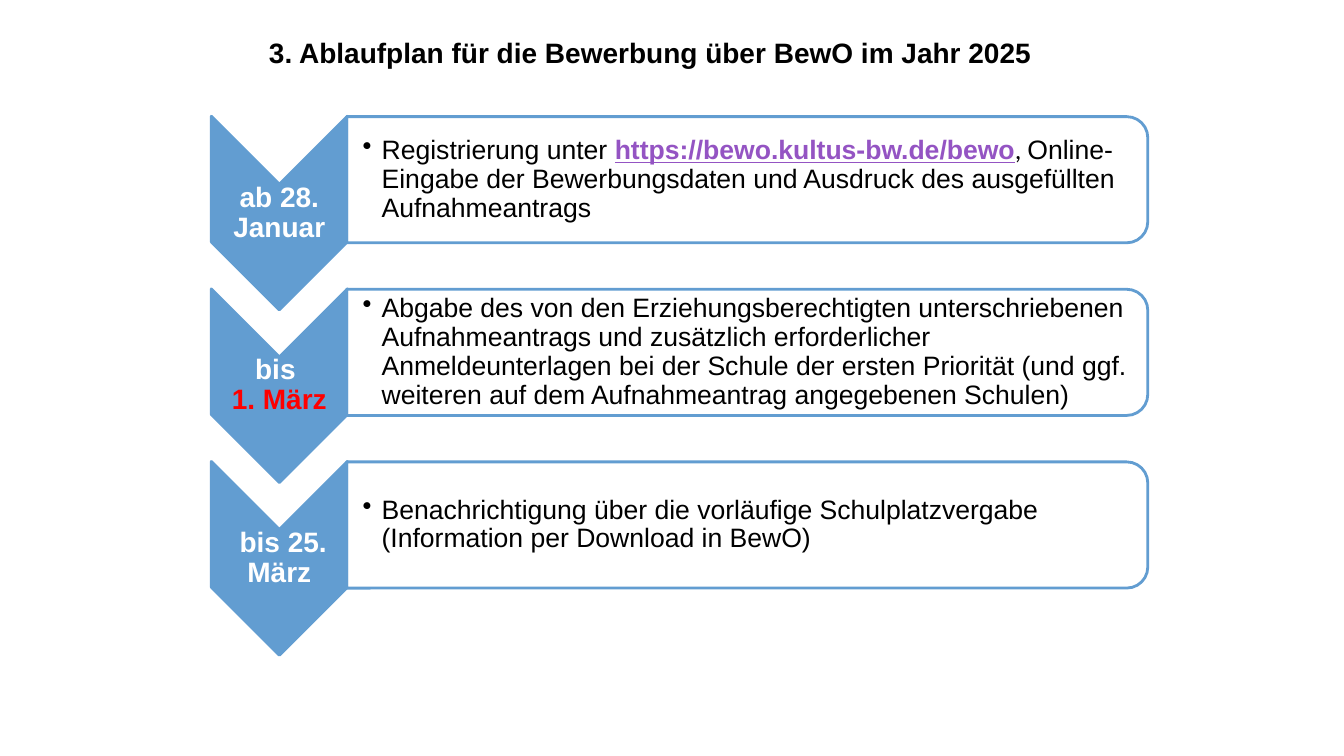
from dataclasses import dataclass

from lxml import etree
from pptx import Presentation
from pptx.dml.color import RGBColor
from pptx.enum.shapes import MSO_SHAPE
from pptx.enum.text import MSO_ANCHOR, PP_ALIGN
from pptx.oxml.ns import qn
from pptx.util import Cm, Pt

CHEVRON = MSO_SHAPE.CHEVRON
ROUNDED_TOP = MSO_SHAPE.ROUND_2_SAME_RECTANGLE
TOP, MIDDLE = MSO_ANCHOR.TOP, MSO_ANCHOR.MIDDLE
LEFT, CENTER = PP_ALIGN.LEFT, PP_ALIGN.CENTER


@dataclass(frozen=True)
class Theme:
    font: str = "Arial"
    alt_font: str = "Calibri"
    black: str = "000000"
    white: str = "FFFFFF"
    red: str = "FF0000"
    blue: str = "629DD1"
    purple: str = "9454C3"
    heading: int = 20
    body: int = 19
    line: int = 2


T = Theme()

# Content: each step has label runs and description runs (text, format)
TITLE = "3. Ablaufplan für die Bewerbung über BewO im Jahr 2025"
STEPS = [
    (
        [("ab 28.\nJanuar", {})],
        [
            ("Registrierung unter ", {}),
            ("https://bewo.kultus-bw.de/bewo",
             {"color": T.purple, "bold": True, "underline": True}),
            (", ", {"font": T.alt_font}),
            ("Online-Eingabe der Bewerbungsdaten und Ausdruck des "
             "ausgefüllten Aufnahmeantrags", {}),
        ],
    ),
    (
        [("bis \n", {}), ("1. März", {"color": T.red})],
        [("Abgabe des von den Erziehungsberechtigten unterschriebenen "
          "Aufnahmeantrags und zusätzlich erforderlicher Anmeldeunterlagen "
          "bei der Schule der ersten Priorität (und ggf. weiteren auf dem "
          "Aufnahmeantrag angegebenen Schulen)", {})],
    ),
    (
        [(" bis 25. März", {})],
        [("Benachrichtigung über die vorläufige Schulplatzvergabe "
          "(Information per Download in BewO)", {})],
    ),
]

# Layout in cm: centres of the first row, and the distance between rows
PITCH = 4.35
CHEVRON_X, CHEVRON_Y = 7.04, 5.37
BAR_X, BAR_Y = 18.83, 4.53
BULLET_INDENT = 0.48


def centred(x, y, w, h):
    return Cm(x - w / 2), Cm(y - h / 2), Cm(w), Cm(h)


def add_run(p, text, *, size, color=T.black, bold=False, underline=False,
            font=T.font):
    for i, part in enumerate(text.split("\n")):
        if i:
            p.add_line_break()
        if part:
            r = p.add_run()
            r.text = part
            r.font.name, r.font.size = font, Pt(size)
            r.font.bold, r.font.underline = bold, underline
            r.font.color.rgb = RGBColor.from_string(color)


def add_text(box, runs, *, align=LEFT, anchor=MIDDLE, spacing=0.9,
             insets=(0.03, 0.03, 0.03, 0.03), bullet=False, **style):
    tf = slide.shapes.add_textbox(*box).text_frame
    tf.word_wrap, tf.vertical_anchor = True, anchor
    (tf.margin_left, tf.margin_top,
     tf.margin_right, tf.margin_bottom) = map(Cm, insets)
    p = tf.paragraphs[0]
    p.alignment, p.line_spacing = align, spacing
    if bullet:
        pPr = p._p.get_or_add_pPr()
        pPr.set("marL", str(Cm(BULLET_INDENT)))
        pPr.set("indent", str(-Cm(BULLET_INDENT)))
        etree.SubElement(pPr, qn("a:buChar")).set("char", "•")
    for text, extra in runs:
        add_run(p, text, **{**style, **extra})


def add_turned_shape(kind, box, fill, opacity=100):
    sp = slide.shapes.add_shape(kind, *box)
    sp.rotation = 90
    sp.shadow.inherit = False
    sp.fill.solid()
    sp.fill.fore_color.rgb = RGBColor.from_string(fill)
    sp.line.color.rgb = RGBColor.from_string(T.blue)
    sp.line.width = Pt(T.line)
    if opacity < 100:
        clr = sp._element.spPr.find(qn("a:solidFill"))[0]
        etree.SubElement(clr, qn("a:alpha")).set("val", str(opacity * 1000))


prs = Presentation()
prs.slide_width, prs.slide_height = Cm(33.87), Cm(19.05)
slide = prs.slides.add_slide(prs.slide_layouts[6])

# Title
add_text((Cm(6.53), Cm(0.33), Cm(24.61), Cm(1.55)), [(TITLE, {})],
         anchor=TOP, spacing=1.5, insets=(0.25, 0.13, 0.25, 0.13),
         size=T.heading, bold=True)

# Steps: chevron with date, bar with description
for i, (label, description) in enumerate(STEPS):
    chevron_y, bar_y = CHEVRON_Y + i * PITCH, BAR_Y + i * PITCH
    add_turned_shape(CHEVRON, centred(CHEVRON_X, chevron_y, 4.88, 3.43), T.blue)
    add_text(centred(CHEVRON_X, chevron_y, 3.43, 1.47), label, align=CENTER,
             size=T.heading, color=T.white, bold=True)
    add_turned_shape(ROUNDED_TOP, centred(BAR_X, bar_y, 3.18, 20.19),
                     T.white, opacity=90)
    add_text(centred(BAR_X - 0.05, bar_y, 20.04, 2.87), description,
             insets=(0.38, 0.03, 0.03, 0.03), bullet=True, size=T.body)

prs.save("out.pptx")
